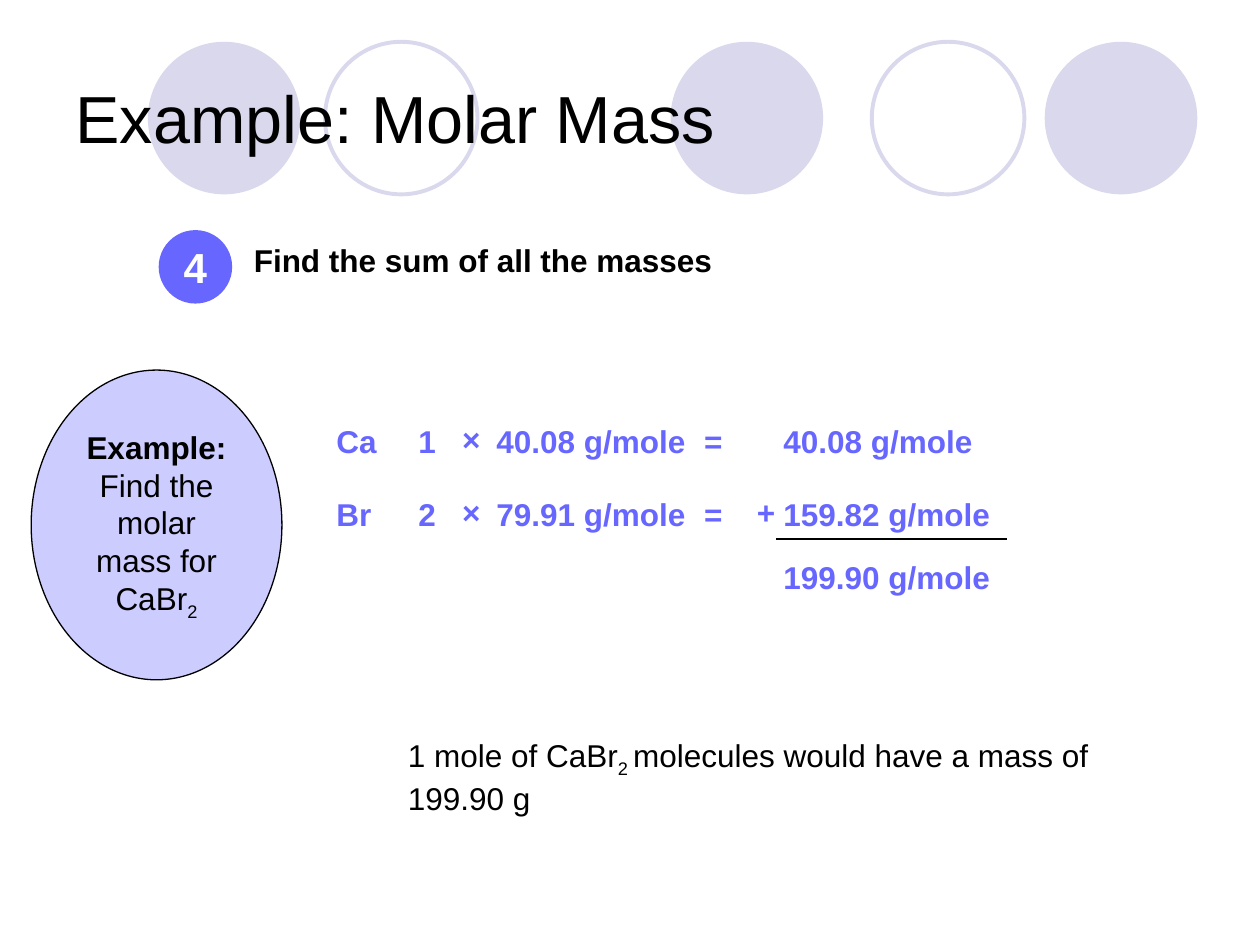
from lxml.etree import SubElement
from pptx import Presentation
from pptx.dml.color import RGBColor
from pptx.enum.shapes import MSO_CONNECTOR, MSO_SHAPE
from pptx.enum.text import MSO_ANCHOR, MSO_AUTO_SIZE, PP_ALIGN
from pptx.oxml.ns import qn
from pptx.util import Pt

# Content; paragraphs are lists of (text, is_subscript)
TITLE = "Example: Molar Mass"
STEP, STEP_TEXT = "4", "Find the sum of all the masses"
TASK_HEAD = "Example:"
TASK = [("Find the molar mass for CaBr", False), ("2", True)]
RESULT = [("1 mole of CaBr", False), ("2 ", True),
          ("molecules would have a mass of 199.90 g", False)]
# Equation cells by column name
ROWS = [
    {"symbol": "Ca", "count": "1", "times": "×", "mass": "40.08 g/mole",
     "equals": "=", "total": "40.08 g/mole"},
    {"symbol": "Br", "count": "2", "times": "×", "mass": "79.91 g/mole",
     "equals": "=", "plus": "+", "total": "159.82 g/mole"},
    {"total": "199.90 g/mole"},
]

# Layout in points; columns are (left, width)
COLUMNS = {"symbol": (185.2, 39), "count": (232, 25), "times": (257, 25),
           "mass": (276.6, 123), "equals": (395.3, 25.5),
           "plus": (425.5, 25.5), "total": (440.6, 133)}
ROW_TOPS = (237.6, 279.4, 315.4)
ROW_H = 29
RAISED = {"times": 1.2, "plus": 1.2}
CIRCLE_TOP, CIRCLE_SIZE = 23.9, 87.2
CIRCLES = [(383.2, True), (597, True), (84.5, True), (498.2, False), (185.7, False)]

THEME = {
    "font": "Arial", "title": 38, "body": 18, "step": 24,
    "text": RGBColor(0, 0, 0), "white": RGBColor(255, 255, 255),
    "accent": RGBColor(0x67, 0x67, 0xFF), "pale": RGBColor(0xCC, 0xCC, 0xFF),
    "decor": RGBColor(0xD9, 0xD8, 0xEC),
}


def style(p, size="body", color="text", bold=False, align=PP_ALIGN.LEFT):
    p.alignment = align
    f = p.font
    f.name, f.size, f.bold = THEME["font"], Pt(THEME[size]), bold
    f.color.rgb = THEME[color]


def add_runs(p, runs):
    for text, subscript in runs:
        r = p.add_run()
        r.text = text
        if subscript:
            r._r.get_or_add_rPr().set("baseline", "-25000")


def add_text(s, box, runs, wrap=True, **look):
    tf = s.shapes.add_textbox(*map(Pt, box)).text_frame
    tf.word_wrap = wrap
    tf.auto_size = MSO_AUTO_SIZE.SHAPE_TO_FIT_TEXT
    add_runs(tf.paragraphs[0], runs)
    style(tf.paragraphs[0], **look)


def add_ellipse(s, box, fill=None, line=None, width=1):
    sp = s.shapes.add_shape(MSO_SHAPE.OVAL, *map(Pt, box))
    sp.shadow.inherit = False
    if fill:
        sp.fill.solid()
        sp.fill.fore_color.rgb = THEME[fill]
    else:
        sp.fill.background()
    if line:
        sp.line.color.rgb = THEME[line]
        sp.line.width = Pt(width)
    else:
        sp.line.fill.background()
    sp.text_frame.vertical_anchor = MSO_ANCHOR.MIDDLE
    return sp


def main():
    prs = Presentation()
    prs.slide_width, prs.slide_height = Pt(720), Pt(540)
    s = prs.slides.add_slide(prs.slide_layouts[5])

    # Decorative circles
    for left, solid in CIRCLES:
        add_ellipse(s, (left, CIRCLE_TOP, CIRCLE_SIZE, CIRCLE_SIZE),
                    fill="decor" if solid else None,
                    line=None if solid else "decor", width=2.25)

    # Title, brought in front of the circles
    title = s.shapes.title
    title.left, title.top, title.width, title.height = map(Pt, (36, 21.6, 648, 90))
    title.text_frame.text = TITLE
    title.text_frame.vertical_anchor = MSO_ANCHOR.MIDDLE
    style(title.text_frame.paragraphs[0], size="title")
    title.element.getparent().append(title.element)

    # Step heading and number
    add_text(s, (138, 134, 582, ROW_H), [(STEP_TEXT, False)], bold=True)
    badge = add_ellipse(s, (91.2, 132, 41, 41), fill="accent", line="accent")
    tf = badge.text_frame
    tf.word_wrap = False
    tf.text = STEP
    style(tf.paragraphs[0], size="step", color="white", bold=True, align=PP_ALIGN.CENTER)

    # Equations; boxes are wide enough to hold each cell on one line
    for top, row in zip(ROW_TOPS, ROWS):
        for name, text in row.items():
            left, width = COLUMNS[name]
            add_text(s, (left, top - RAISED.get(name, 0), width, ROW_H),
                     [(text, False)], color="accent", bold=True)

    # Sum line
    rule = s.shapes.add_connector(MSO_CONNECTOR.STRAIGHT, Pt(443.5), Pt(308.2),
                                  Pt(575.3), Pt(308.2))
    rule.line.color.rgb = THEME["text"]
    rule.line.width = Pt(1)
    SubElement(rule.element.spPr, qn("a:effectLst"))

    # Result
    add_text(s, (226, 417, 461, 50), RESULT)

    # Task bubble
    tf = add_ellipse(s, (17.8, 211.5, 143.3, 177), "pale", "text", 0.75).text_frame
    tf.word_wrap = True
    tf.text = TASK_HEAD
    style(tf.paragraphs[0], bold=True, align=PP_ALIGN.CENTER)
    p = tf.add_paragraph()
    add_runs(p, TASK)
    style(p, align=PP_ALIGN.CENTER)

    prs.save("out.pptx")


if __name__ == "__main__":
    main()
